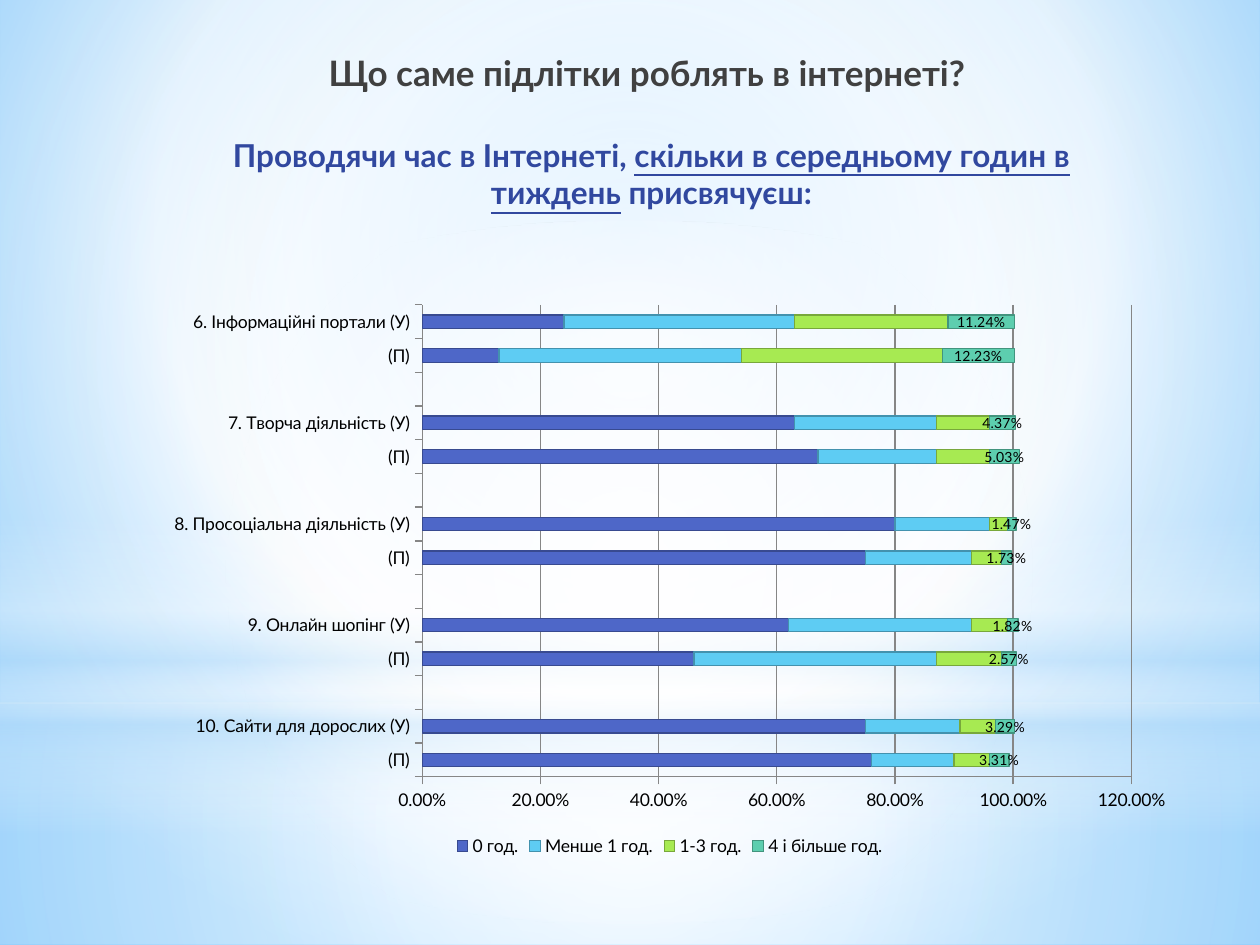
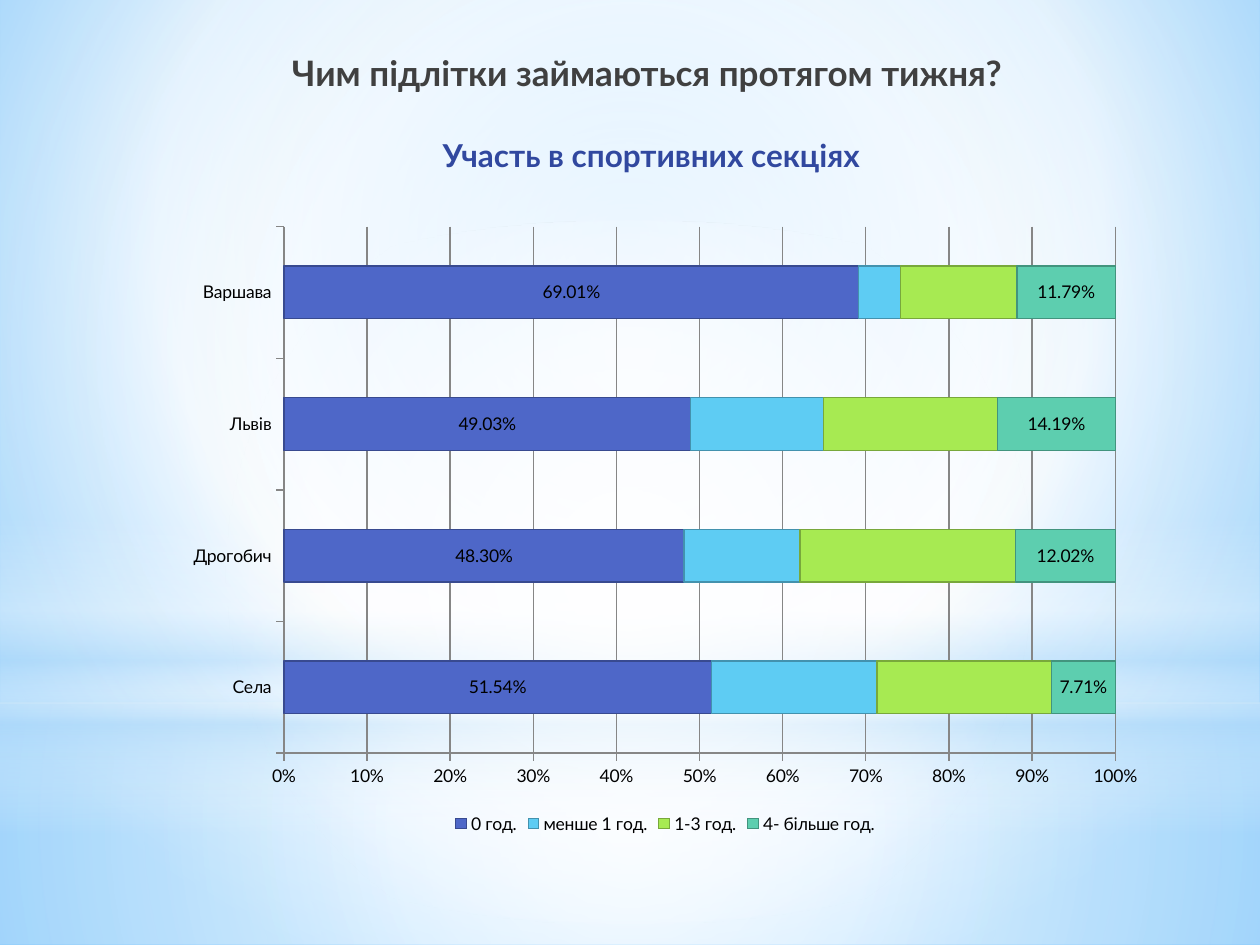
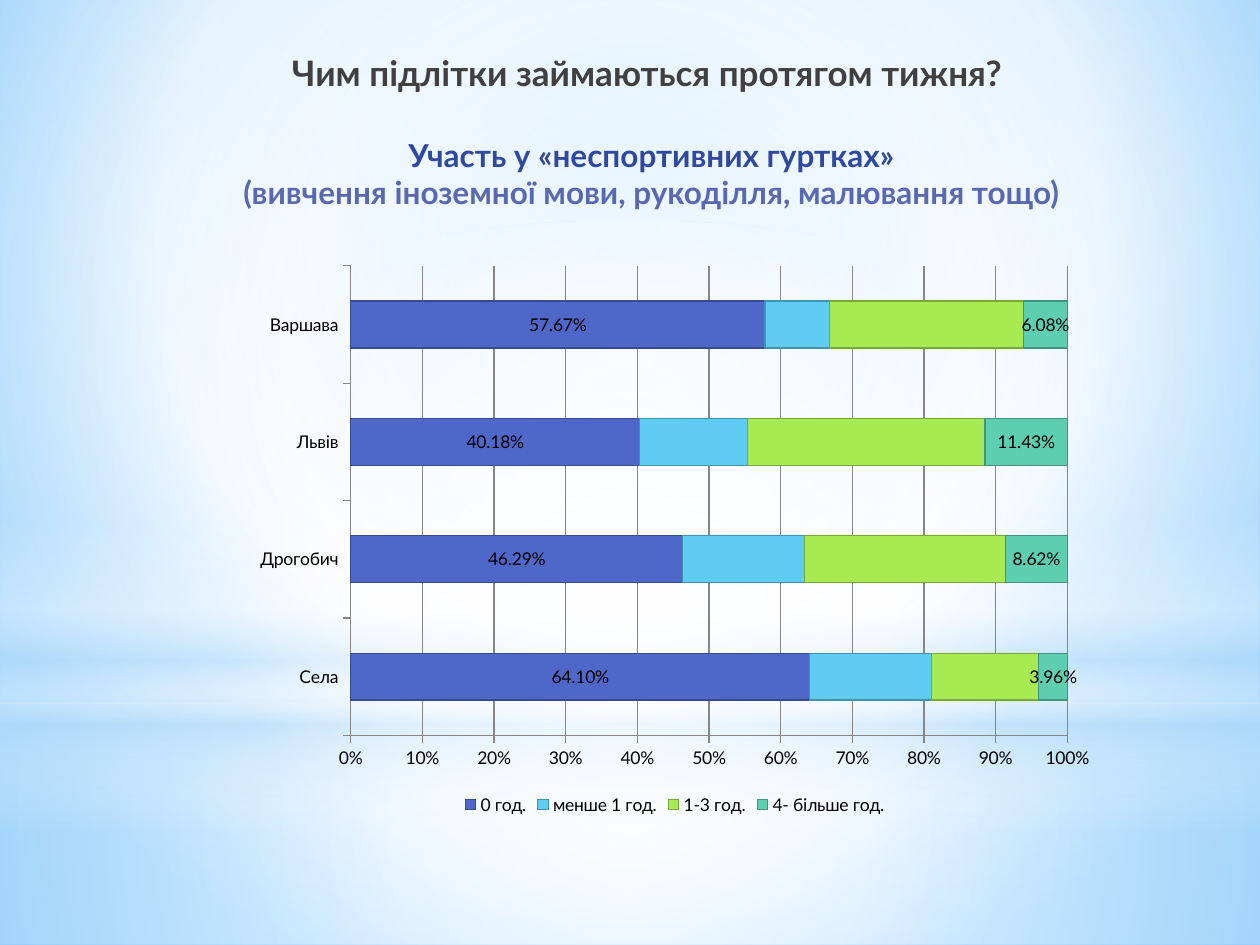
from lxml import etree
from pptx import Presentation
from pptx.chart.data import CategoryChartData
from pptx.dml.color import RGBColor
from pptx.enum import chart as ch, shapes, text
from pptx.oxml.ns import qn
from pptx.util import Inches, Pt

FONT = "Lato"
TITLE, SUBTITLE, NOTE, GRID = "404040", "31489F", "5968B0", "868686"
SERIES_COLORS = ["4E67C8", "5ECCF3", "A7EA52", "5DCEAF"]
WHITE, SKY = "FFFFFF", "B4DCFA"
CENTER = (50, 50, 50, 50)

# Gradients: stops of (position, colour, opacity), then focus box, or None for vertical
BACKGROUND = ([(0, "9ED5FF", 100), (60, WHITE, 100), (100, "5BB9FF", 100)], (20, 10, 20, 60))
BANDS = [
    ("RECTANGLE", 5.58, 1.92, [(0, WHITE, 91), (37, WHITE, 76), (100, SKY, 79)], CENTER),
    ("RECTANGLE", 0, 5.58, [(0, WHITE, 89), (48, WHITE, 62), (100, SKY, 79)], CENTER),
    ("RECTANGLE", 4.12, 2.5, [(0, WHITE, 0), (29, WHITE, 30), (45, SKY, 40),
                              (55, WHITE, 26), (65, SKY, 60), (100, WHITE, 0)], None),
    ("OVAL", 1.75, 5.58, [(0, WHITE, 100), (56, WHITE, 0)], CENTER),
]

# Rows run from the bottom bar up: category, then one value per series
GAP = ("", None, None, None, None)
WEEK_TITLE = "Чим підлітки займаються протягом тижня? "
WEEK_SERIES = ["0 год.", "менше 1 год.", "1-3 год.", "4- більше год."]
SLIDES = [
    dict(
        title="Що саме підлітки роблять в інтернеті? ", title_height=0.71,
        subtitle=[[("Проводячи час в Інтернеті, ", SUBTITLE, False),
                   ("скільки в середньому годин в тиждень", SUBTITLE, True),
                   (" присвячуєш:", SUBTITLE, False)]],
        box=(1.22, 2.33, 8.19, 4.51), kind="BAR_STACKED", axis_format="0.00%",
        scale=(1.2, 0.2), labels={3: 8},
        series=["0 год.", "Менше 1 год.", "1-3 год.", "4 і більше год."],
        rows=[
            ("(П)", 0.76, 0.14, 0.06, 0.0331),
            ("10. Сайти для дорослих (У)", 0.75, 0.16, 0.06, 0.0329),
            GAP,
            ("(П)", 0.46, 0.41, 0.11, 0.0257),
            ("9. Онлайн шопінг (У)", 0.62, 0.31, 0.06, 0.0182),
            GAP,
            ("(П)", 0.75, 0.18, 0.05, 0.0173),
            ("8. Просоціальна діяльність (У)", 0.8, 0.16, 0.03, 0.0147),
            GAP,
            ("(П)", 0.67, 0.2, 0.09, 0.0503),
            ("7. Творча діяльність (У)", 0.63, 0.24, 0.09, 0.0437),
            GAP,
            ("(П)", 0.13, 0.41, 0.34, 0.1223),
            ("6. Інформаційні портали (У)", 0.24, 0.39, 0.26, 0.1124),
        ]),
    dict(
        title=WEEK_TITLE, title_height=0.47,
        subtitle=[[("Участь в спортивних секціях", SUBTITLE, False)]],
        box=(1.38, 1.7, 7.8, 4.96), kind="BAR_STACKED_100", axis_format="0%",
        scale=(1, 0.1), labels={0: 10, 3: 10}, series=WEEK_SERIES,
        rows=[
            ("Села", 0.5154, 0.2, 0.21, 0.0771),
            ("Дрогобич", 0.483, 0.14, 0.26, 0.1202),
            ("Львів", 0.4903, 0.16, 0.21, 0.1419),
            ("Варшава", 0.6901, 0.05, 0.14, 0.1179),
        ]),
    dict(
        title=WEEK_TITLE, title_height=0.47,
        subtitle=[[("Участь у «неспортивних гуртках»", SUBTITLE, False)],
                  [("(вивчення іноземної мови, рукоділля, малювання тощо)", NOTE, False)]],
        box=(1.93, 2.02, 6.85, 4.49), kind="BAR_STACKED_100", axis_format="0%",
        scale=(1, 0.1), labels={0: 10, 3: 10}, series=WEEK_SERIES,
        rows=[
            ("Села", 0.641, 0.17, 0.15, 0.0396),
            ("Дрогобич", 0.4629, 0.17, 0.28, 0.0862),
            ("Львів", 0.4018, 0.15, 0.33, 0.1143),
            ("Варшава", 0.5767, 0.09, 0.27, 0.0608),
        ]),
]


def rgb(color):
    return RGBColor.from_string(color)


def darker(color, share=0.72):
    return "".join(f"{int(int(color[i:i + 2], 16) * share):02X}" for i in (0, 2, 4))


def set_gradient(fill, holder, stops, focus):
    """Replace the fill of holder with a gradient that has transparent stops."""
    fill.background()
    grad = etree.Element(qn("a:gradFill"), rotWithShape="1")
    gs_list = etree.SubElement(grad, qn("a:gsLst"))
    for position, color, opacity in stops:
        gs = etree.SubElement(gs_list, qn("a:gs"), pos=str(position * 1000))
        clr = etree.SubElement(gs, qn("a:srgbClr"), val=color)
        if opacity < 100:
            etree.SubElement(clr, qn("a:alpha"), val=str(opacity * 1000))
    if focus:
        circle = etree.SubElement(grad, qn("a:path"), path="circle")
        sides = {side: str(v * 1000) for side, v in zip("ltrb", focus)}
        etree.SubElement(circle, qn("a:fillToRect"), sides)
    else:
        etree.SubElement(grad, qn("a:lin"), ang="5400000", scaled="0")
    holder.replace(holder.find(qn("a:noFill")), grad)


def add_backdrop(slide):
    fill = slide.background.fill
    fill.background()
    set_gradient(fill, slide.element.find(".//" + qn("p:bgPr")), *BACKGROUND)
    for shape, top, height, stops, focus in BANDS:
        sp = slide.shapes.add_shape(getattr(shapes.MSO_SHAPE, shape), 0, Inches(top),
                                    Inches(10), Inches(height))
        sp.shadow.inherit = False
        sp.line.fill.background()
        set_gradient(sp.fill, sp.element.spPr, stops, focus)


def add_heading(slide, title, height, subtitle):
    tf = slide.shapes.add_textbox(Inches(1.61), Inches(0.36), Inches(7.12),
                                  Inches(height)).text_frame
    tf.word_wrap = True
    tf.vertical_anchor = text.MSO_ANCHOR.TOP
    for i, runs in enumerate([[(title, TITLE, False)]] + subtitle):
        p = tf.add_paragraph() if i else tf.paragraphs[0]
        p.alignment = text.PP_ALIGN.CENTER
        p.font.name, p.font.bold = FONT, True
        p.font.size = Pt(18 if i else 20)
        p.space_before = Pt(24 if i == 1 else 0)
        for words, color, underline in runs:
            r = p.add_run()
            r.text = words
            r.font.color.rgb = rgb(color)
            if underline:
                r.font.underline = True


def set_font(font, size):
    font.name, font.size = FONT, Pt(size)
    font.color.rgb = rgb("000000")


def add_hours_chart(slide, box, kind, series, rows, labels, axis_format, scale):
    names, *columns = zip(*rows)
    data = CategoryChartData(number_format="0.00%")
    data.categories = names
    for name, values in zip(series, columns):
        data.add_series(name, values)
    chart = slide.shapes.add_chart(getattr(ch.XL_CHART_TYPE, kind),
                                   *map(Inches, box), data).chart
    set_font(chart.font, 10)
    chart.has_title = False
    chart.has_legend = True
    chart.legend.position = ch.XL_LEGEND_POSITION.BOTTOM
    chart.legend.include_in_layout = False

    # Axes
    axis = chart.value_axis
    axis.minimum_scale = 0
    axis.maximum_scale, axis.major_unit = scale
    axis.has_major_gridlines = True
    axis.tick_labels.number_format = axis_format
    axis.tick_labels.number_format_is_linked = False
    for fmt in (axis.format, axis.major_gridlines.format, chart.category_axis.format):
        fmt.line.color.rgb = rgb(GRID)
        fmt.line.width = Pt(0.75)

    # Bars and labels
    plot = chart.plots[0]
    plot.vary_by_categories = False
    plot.gap_width, plot.overlap = 150, 100
    for i, (bars, color) in enumerate(zip(plot.series, SERIES_COLORS)):
        bars.format.fill.solid()
        bars.format.fill.fore_color.rgb = rgb(color)
        bars.format.line.color.rgb = rgb(darker(color))
        bars.format.line.width = Pt(0.75)
        if i in labels:
            dl = bars.data_labels
            dl.show_value = True
            dl.number_format, dl.number_format_is_linked = "0.00%", False
            set_font(dl.font, labels[i])


def main():
    prs = Presentation()
    prs.slide_width, prs.slide_height = Inches(10), Inches(7.5)
    for s in SLIDES:
        slide = prs.slides.add_slide(prs.slide_layouts[6])
        add_backdrop(slide)
        add_heading(slide, s["title"], s["title_height"], s["subtitle"])
        add_hours_chart(slide, s["box"], s["kind"], s["series"], s["rows"],
                        s["labels"], s["axis_format"], s["scale"])
    prs.save("out.pptx")


if __name__ == "__main__":
    main()
